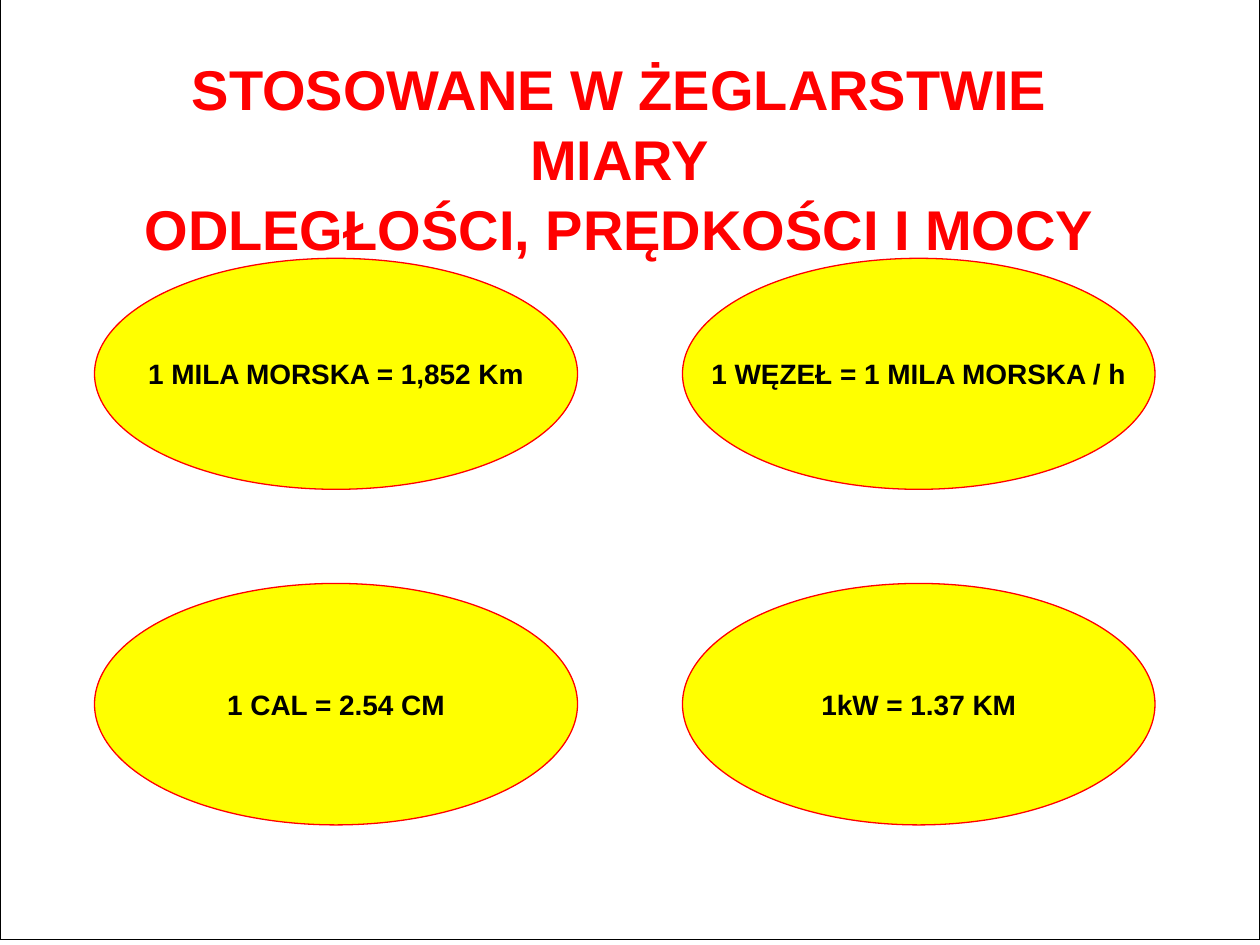
from dataclasses import dataclass

from pptx import Presentation
from pptx.dml.color import RGBColor
from pptx.enum.shapes import MSO_SHAPE
from pptx.enum.text import MSO_ANCHOR, PP_ALIGN
from pptx.util import Pt

RECT = MSO_SHAPE.RECTANGLE
OVAL = MSO_SHAPE.OVAL
TOP = MSO_ANCHOR.TOP
MIDDLE = MSO_ANCHOR.MIDDLE
CENTER = PP_ALIGN.CENTER


@dataclass(frozen=True)
class Theme:
    font: str = "Arial"
    ink: str = "000000"
    red: str = "FF0000"
    yellow: str = "FFFF00"
    title: int = 32
    body: int = 16
    line: float = 0.75


THEME = Theme()
COLS = ((54, 276), (390, 270))
ROWS = ((147.6, 132), (333.4, 138))
FACTS = (
    ("1 MILA MORSKA = 1,852 Km", "1 WĘZEŁ = 1 MILA MORSKA / h"),
    ("1 CAL = 2.54 CM", "1kW = 1.37 KM"),
)


def write(frame, text, size, color, anchor=MIDDLE, wrap=False, space=1.0):
    frame.word_wrap = wrap
    frame.vertical_anchor = anchor
    para = frame.paragraphs[0]
    para.text = text
    para.alignment = CENTER
    para.line_spacing = space
    for run in para.runs:
        run.font.name = THEME.font
        run.font.size = Pt(size)
        run.font.bold = True
        run.font.color.rgb = RGBColor.from_string(color)


def draw(slide, kind, box, line, fill=None):
    shape = slide.shapes.add_shape(kind, *map(Pt, box))
    shape.shadow.inherit = False
    shape.line.color.rgb = RGBColor.from_string(line)
    shape.line.width = Pt(THEME.line)
    if fill:
        shape.fill.solid()
        shape.fill.fore_color.rgb = RGBColor.from_string(fill)
    else:
        shape.fill.background()
    return shape


def add_title(slide, text, box):
    label = slide.shapes.add_textbox(*map(Pt, box))
    write(label.text_frame, text, THEME.title, THEME.red,
          anchor=TOP, wrap=True, space=1.04)


def add_fact(slide, text, box):
    oval = draw(slide, OVAL, box, THEME.red, THEME.yellow)
    write(oval.text_frame, text, THEME.body, THEME.ink)


def main():
    deck = Presentation()
    deck.slide_width, deck.slide_height = Pt(720), Pt(540)
    slide = deck.slides.add_slide(deck.slide_layouts[6])
    draw(slide, RECT, (0, -2.9, 720, 540), THEME.ink)
    for (top, high), facts in zip(ROWS, FACTS):
        for (left, wide), fact in zip(COLS, facts):
            add_fact(slide, fact, (left, top, wide, high))
    add_title(slide, "STOSOWANE W ŻEGLARSTWIE MIARY\nODLEGŁOŚCI, PRĘDKOŚCI I MOCY",
              (49, 26, 610, 96))
    deck.save("out.pptx")


if __name__ == "__main__":
    main()
